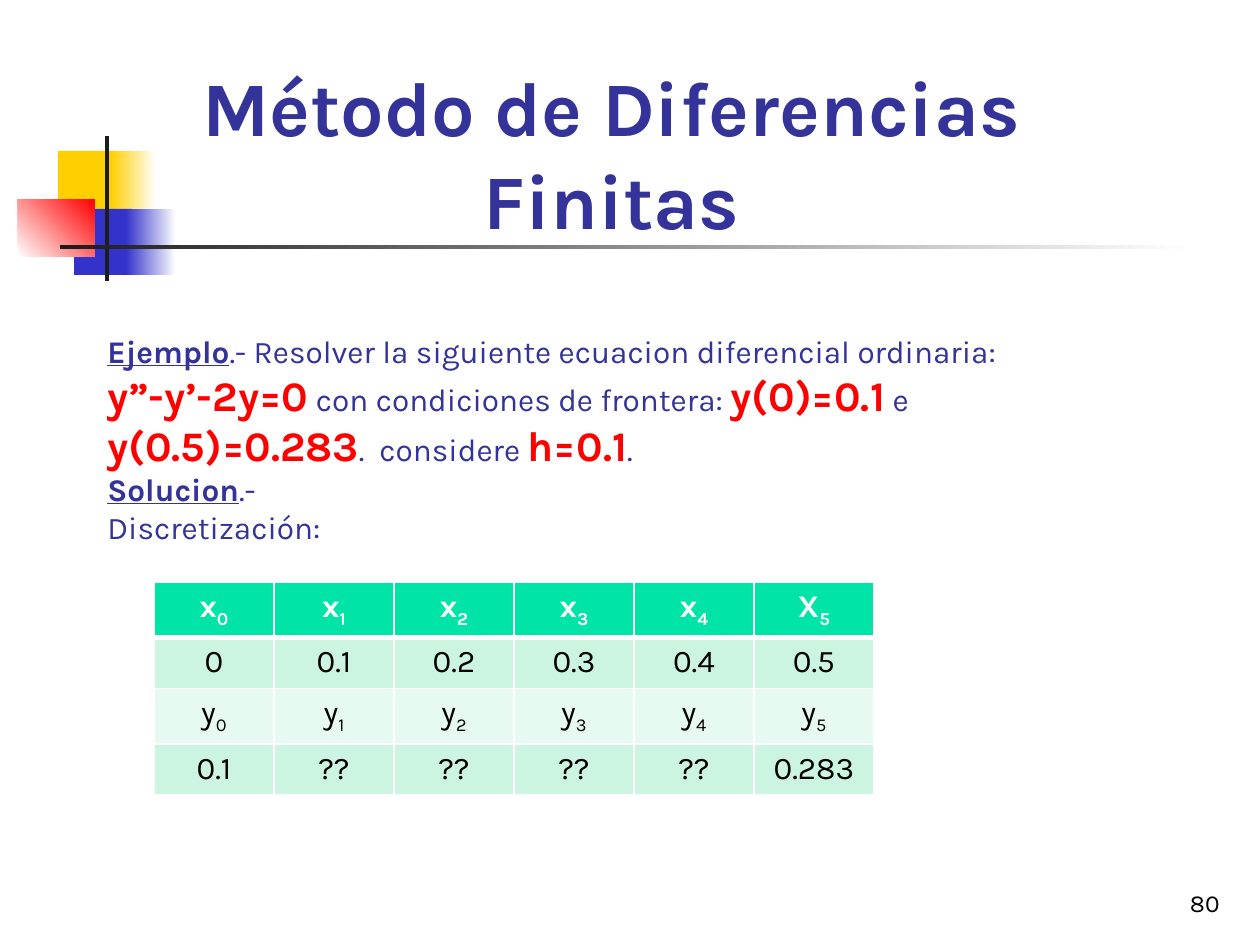
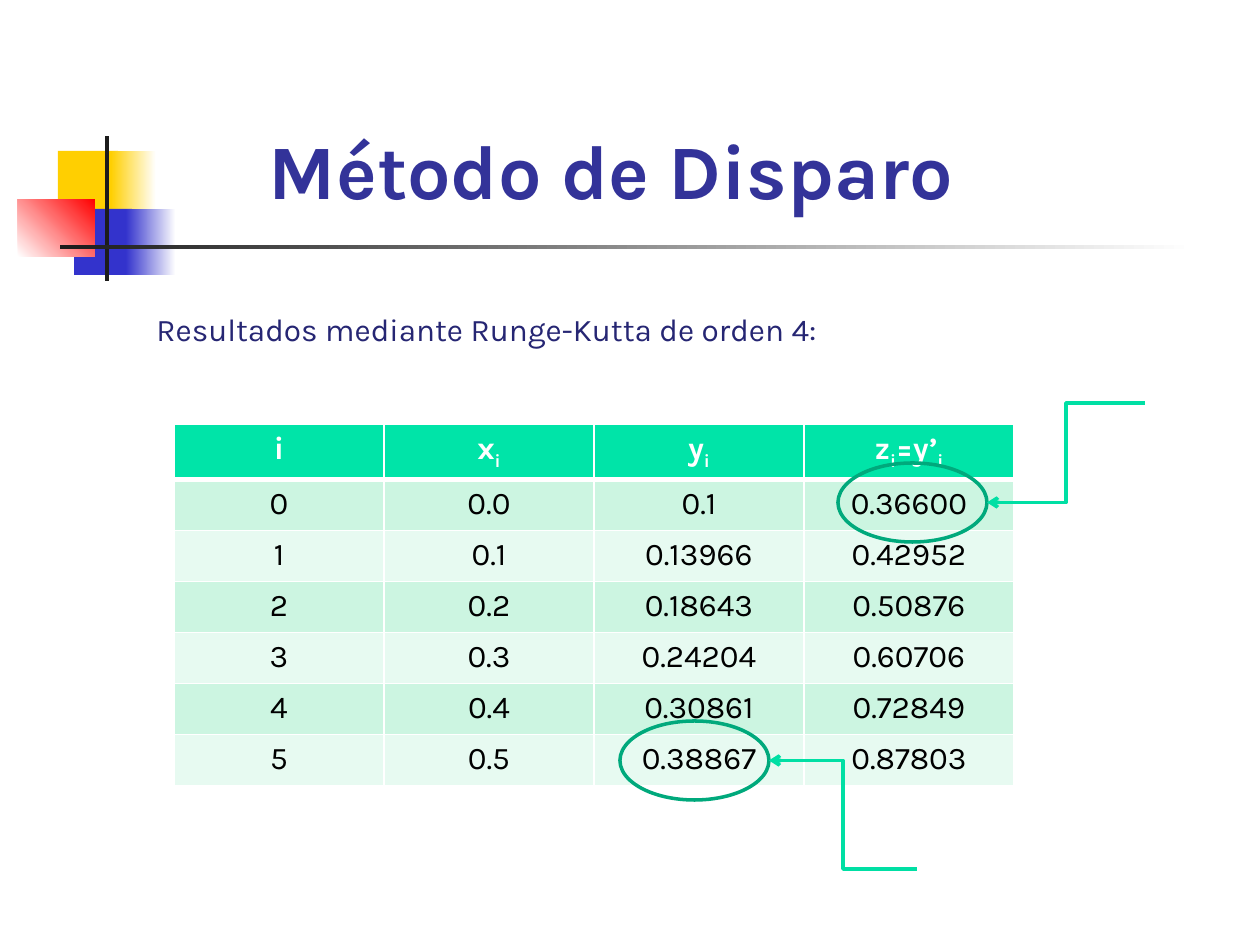
from lxml import etree
from pptx import Presentation
from pptx import util as u
from pptx.dml.color import RGBColor
from pptx.enum import shapes, text
from pptx.oxml import ns

FONT = "Karla"
WHITE = RGBColor(0xFF, 0xFF, 0xFF)
BLACK = RGBColor(0x00, 0x00, 0x00)
INK = RGBColor(0x1C, 0x1C, 0x1C)
GOLD = RGBColor(0xFF, 0xCF, 0x01)
BLUE = RGBColor(0x33, 0x33, 0xCC)
RED = RGBColor(0xFF, 0x00, 0x00)
NAVY = RGBColor(0x33, 0x33, 0x99)
DEEP = RGBColor(0x26, 0x26, 0x73)
HEAD = RGBColor(0x00, 0xE4, 0xA8)
BANDS = RGBColor(0xE7, 0xFA, 0xF1), RGBColor(0xCC, 0xF5, 0xE1)
ARROW = RGBColor(0x00, 0xDF, 0xA4)
RING = RGBColor(0x00, 0xA9, 0x7C)

LEFT, MID, RIGHT = text.PP_ALIGN.LEFT, text.PP_ALIGN.CENTER, text.PP_ALIGN.RIGHT
TOP, LOW = text.MSO_ANCHOR.TOP, text.MSO_ANCHOR.BOTTOM

DECOR = [
    ((58, 151, 60, 66), [GOLD], 0),
    ((111, 151, 45, 66), [GOLD, WHITE], 0),
    ((74, 209, 58, 66), [BLUE], 0),
    ((126, 209, 50, 66), [BLUE, WHITE], 0),
    ((18, 199, 77, 58), [WHITE, RED], 45),
    ((105, 136, 4, 145), [INK], 0),
    ((60, 245, 1134, 4), [INK, WHITE], 0),
]

STYLES = {
    "label": dict(bold=True, underline=True),
    "math": dict(bold=True, size=u.Pt(24), color=RED),
    "plain": {},
}
TASK = [
    [("label", "Ejemplo"),
     ("plain", ".- Resolver la siguiente ecuacion diferencial ordinaria:")],
    [("math", "y”-y’-2y=0"), ("plain", " con condiciones de frontera: "),
     ("math", "y(0)=0.1"), ("plain", " e "), ("math", "y(0.5)=0.283"),
     ("plain", ".  considere "), ("math", "h=0.1"), ("plain", ".")],
    [("label", "Solucion"), ("plain", ".-")],
    [("plain", "Discretización:")],
]
GRID = [
    ["x_0", "x_1", "x_2", "x_3", "x_4", "X_5"],
    ["0", "0.1", "0.2", "0.3", "0.4", "0.5"],
    ["y_0", "y_1", "y_2", "y_3", "y_4", "y_5"],
    ["0.1", "??", "??", "??", "??", "0.283"],
]
RESULTS = [
    ["i", "x_i", "y_i", "z_i=y’_i"],
    ["0", "0.0", "0.1", "0.36600"],
    ["1", "0.1", "0.13966", "0.42952"],
    ["2", "0.2", "0.18643", "0.50876"],
    ["3", "0.3", "0.24204", "0.60706"],
    ["4", "0.4", "0.30861", "0.72849"],
    ["5", "0.5", "0.38867", "0.87803"],
]
RING_W, RING_H = 149, 79
MARKS = [((838, 463), (1145, 403)), ((620, 721), (917, 869))]
ROW_H = 51


def px(*vals):
    return [u.Emu(round(v * 914400 / 126)) for v in vals]


def style(font, size=None, color=None, bold=None, underline=None):
    if size:
        font.size = size
    if color is not None:
        font.color.rgb = color
    if bold is not None:
        font.bold = bold
    if underline is not None:
        font.underline = underline


def format_para(para, size, color, align, bold=False):
    para.alignment = align
    para.font.name = FONT
    style(para.font, u.Pt(size), color, bold)


def add_run(para, words, **look):
    run = para.add_run()
    run.text = words
    style(run.font, **look)
    return run


def add_decor(slide):
    for box, colors, angle in DECOR:
        part = slide.shapes.add_shape(shapes.MSO_SHAPE.RECTANGLE, *px(*box))
        part.shadow.inherit = False
        part.line.fill.background()
        if len(colors) == 1:
            part.fill.solid()
            part.fill.fore_color.rgb = colors[0]
            continue
        part.fill.gradient()
        part.fill.gradient_angle = angle
        for stop, color, place in zip(part.fill.gradient_stops, colors, (0, 1)):
            stop.color.rgb = color
            stop.position = place


def add_slide(deck, title, top):
    slide = deck.slides.add_slide(deck.slide_layouts[5])
    add_decor(slide)
    head = slide.shapes.title
    head.left, head.top, head.width, head.height = px(105, top, 1013, 86)
    frame = head.text_frame
    frame.text = title
    frame.auto_size = text.MSO_AUTO_SIZE.NONE
    frame.vertical_anchor = LOW
    format_para(frame.paragraphs[0], 44, NAVY, MID, True)
    return slide


def add_text(slide, box, lines, size, color, align=LEFT, anchor=TOP):
    frame = slide.shapes.add_textbox(*px(*box)).text_frame
    frame.word_wrap = True
    frame.vertical_anchor = anchor
    for n, runs in enumerate(lines):
        para = frame.add_paragraph() if n else frame.paragraphs[0]
        format_para(para, size, color, align)
        for kind, words in runs:
            add_run(para, words, **STYLES[kind])


def add_math(para, words):
    first, *rest = words.split("_")
    add_run(para, first)
    for part in rest:
        sub = add_run(para, part[0])
        sub.font._element.set("baseline", "-25000")
        if part[1:]:
            add_run(para, part[1:])


def add_borders(cell, row):
    props = cell._tc.get_or_add_tcPr()
    widths = dict(lnL=1, lnR=1, lnT=3 if row == 1 else 1, lnB=1 if row else 3)
    for n, (side, width) in enumerate(widths.items()):
        line = etree.Element(ns.qn("a:" + side), w=str(u.Pt(width)))
        fill = etree.SubElement(line, ns.qn("a:solidFill"))
        etree.SubElement(fill, ns.qn("a:srgbClr"), val=str(WHITE))
        props.insert(n, line)


def add_table(slide, left, top, col_w, rows):
    count = len(rows), len(rows[0])
    box = px(left, top, col_w * count[1], ROW_H * count[0])
    table = slide.shapes.add_table(*count, *box).table
    for r, row in enumerate(rows):
        for c, words in enumerate(row):
            cell = table.cell(r, c)
            para = cell.text_frame.paragraphs[0]
            format_para(para, 18, BLACK if r else WHITE, MID, r == 0)
            add_math(para, words)
            cell.fill.solid()
            cell.fill.fore_color.rgb = BANDS[r % 2] if r else HEAD
            add_borders(cell, r)


def add_mark(slide, corner, start):
    x, y = corner
    ring = slide.shapes.add_shape(
        shapes.MSO_SHAPE.OVAL, *px(x, y, RING_W, RING_H))
    ring.shadow.inherit = False
    ring.fill.background()
    tip = x + RING_W, y + RING_H / 2
    arrow = slide.shapes.add_connector(
        shapes.MSO_CONNECTOR.ELBOW, *px(*start, *tip))
    for item, color in ((ring, RING), (arrow, ARROW)):
        item.line.color.rgb = color
        item.line.width = u.Pt(2)
    etree.SubElement(arrow.line._get_or_add_ln(), ns.qn("a:tailEnd"), type="arrow")
    etree.SubElement(arrow._element.spPr, ns.qn("a:effectLst"))


def main():
    deck = Presentation()
    deck.slide_width, deck.slide_height = px(1260, 945)

    slide = add_slide(deck, "Método de Diferencias Finitas", 165)
    add_text(slide, (970, 861, 262, 63), [[("plain", "80")]], 14, BLACK, RIGHT, LOW)
    add_text(slide, (95, 462, 1081, 90), TASK, 18, NAVY, anchor=LOW)
    add_table(slide, 154, 582, 120, GRID)

    slide = add_slide(deck, "Método de Disparo", 135)
    lead = [[("plain", "Resultados mediante Runge-Kutta de orden 4:")]]
    add_text(slide, (144, 304, 973, 50), lead, 18, DEEP)
    add_table(slide, 174, 424, 210, RESULTS)
    for corner, start in MARKS:
        add_mark(slide, corner, start)

    deck.save("out.pptx")


if __name__ == "__main__":
    main()
